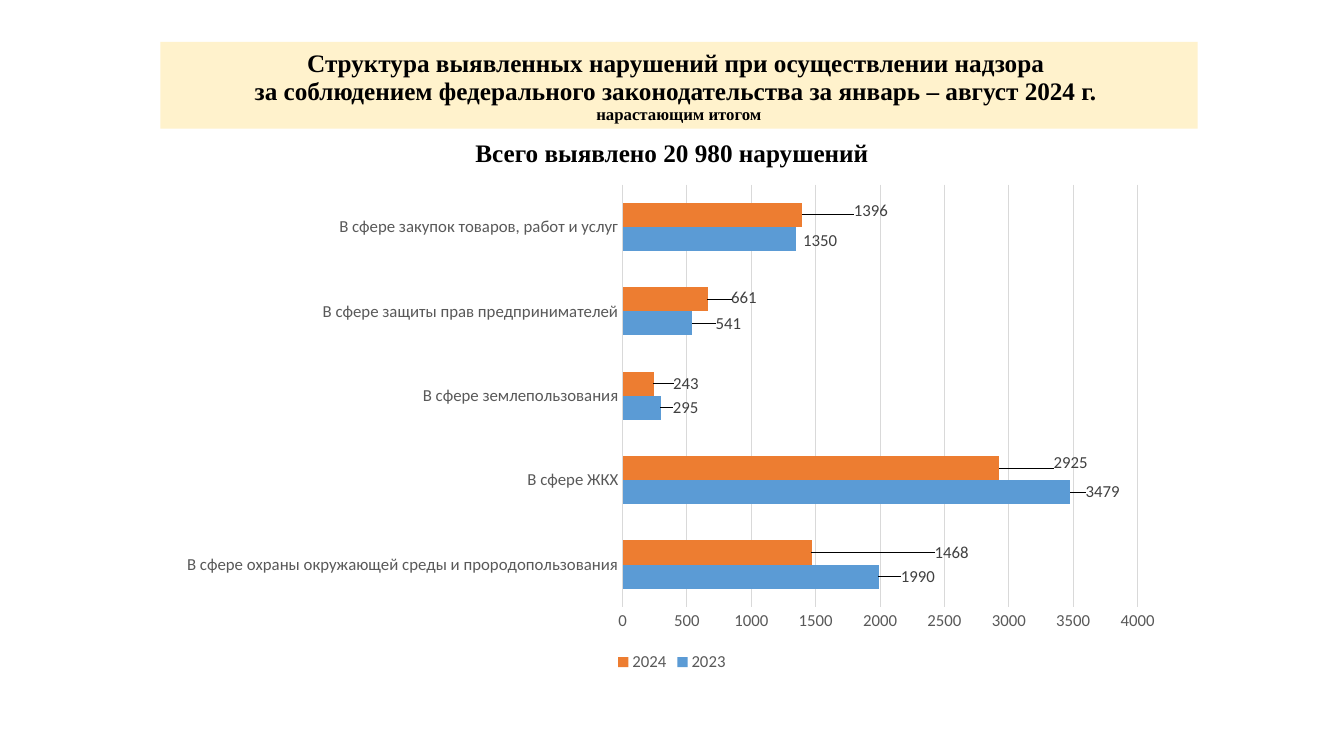
from copy import deepcopy
from lxml.etree import SubElement as sub
from pptx import Presentation
from pptx.chart.data import CategoryChartData as Data
from pptx.dml.color import RGBColor as RGB
from pptx.enum.chart import XL_CHART_TYPE as Kind, XL_LABEL_POSITION as Spot
from pptx.enum.chart import XL_LEGEND_POSITION as Side, XL_TICK_MARK as Tick
from pptx.enum.text import MSO_ANCHOR as Anchor, MSO_AUTO_SIZE as Fit, PP_ALIGN as Align
from pptx.oxml import parse_xml
from pptx.oxml.ns import qn
from pptx.util import Pt

HEX = {"band": "FFF2CC", "black": "000000", "text": "595959", "label": "404040",
       "grid": "D9D9D9", "2023": "5B9BD5", "2024": "ED7D31"}
HEAD = ("Структура выявленных нарушений при осуществлении надзора \v"
        "за соблюдением федерального законодательства за январь – август 2024 г. \v"
        "нарастающим итогом")
TOTAL = "Всего выявлено 20 980 нарушений"
AREAS = ["В сфере охраны окружающей среды и прородопользования", "В сфере ЖКХ",
         "В сфере землепользования", "В сфере защиты прав предпринимателей",
         "В сфере закупок товаров, работ и услуг"]
COUNTS = {"2023": [1990, 3479, 295, 541, 1350], "2024": [1468, 2925, 243, 661, 1396]}
# Label shifts in points from the end of each bar
SHIFTS = {"2023": [(13, 0), (8, 0), (6, 0), (14, 0), (2, 1)],
          "2024": [(85, 0), (36, -4), (11, 0), (14, -1), (34, -3)]}


def color(name):
    return RGB.from_string(HEX[name])


def style(font, size, tone, face="Calibri", bold=False):
    font.name, font.size, font.bold = face, Pt(size), bold
    font.color.rgb = color(tone)


def place(shape, box):
    shape.left, shape.top, shape.width, shape.height = [Pt(v) for v in box]


def set_text(shape, text, sizes, space):
    frame = shape.text_frame
    frame.word_wrap, frame.auto_size = True, Fit.NONE
    para = frame.paragraphs[0]
    para.text = text
    para.alignment, para.line_spacing = Align.CENTER, space
    for run, size in zip(para.runs, sizes):
        style(run.font, size, "black", "Times New Roman", True)
    # Line breaks take the format of the first run
    for gap in para._p.findall(qn("a:br")):
        gap.append(deepcopy(para.runs[0].font._rPr))


def add_head(slide, box):
    title = slide.shapes.title
    place(title, box)
    title.fill.solid()
    title.fill.fore_color.rgb = color("band")
    set_text(title, HEAD, [18, 18, 12], 0.9)
    title.text_frame.vertical_anchor = Anchor.BOTTOM


def add_total(slide, box):
    note = slide.shapes.add_textbox(*[Pt(v) for v in box])
    set_text(note, TOTAL, [18], 0.8)


def set_layout(layout, **values):
    for old in list(layout):
        layout.remove(old)
    manual = sub(layout, qn("c:manualLayout"))
    for key, val in values.items():
        sub(manual, qn("c:" + key)).set("val", str(val))


def add_labels(series, box):
    labels = series.data_labels
    labels.show_value, labels.position = True, Spot.OUTSIDE_END
    style(labels.font, 12, "label")
    for i, (dx, dy) in enumerate(SHIFTS[series.name]):
        label = series.points[i].data_label
        style(label.font, 12, "label")
        label.position = Spot.OUTSIDE_END
        node = labels._element.findall(qn("c:dLbl"))[i]
        layout = node.makeelement(qn("c:layout"))
        node.insert(1, layout)
        set_layout(layout, x=round(dx / box[2], 4), y=round(dy / box[3], 4))


def add_bars(slide, box):
    data = Data()
    data.categories = AREAS
    for year, vals in COUNTS.items():
        data.add_series(year, vals)
    chart = slide.shapes.add_chart(Kind.BAR_CLUSTERED, *[Pt(v) for v in box], data).chart
    style(chart.font, 10, "black")
    chart.has_title = False

    # Axes
    for axis in (chart.category_axis, chart.value_axis):
        axis.major_tick_mark = axis.minor_tick_mark = Tick.NONE
        axis.format.line.fill.background()
        style(axis.tick_labels.font, 12, "text")
    scale = chart.value_axis
    scale.minimum_scale, scale.maximum_scale, scale.major_unit = 0, 4000, 500
    grid = scale.major_gridlines.format.line
    grid.width = Pt(0.75)
    grid.color.rgb = color("grid")

    # Legend
    chart.has_legend = True
    chart.legend.position, chart.legend.include_in_layout = Side.BOTTOM, False
    style(chart.legend.font, 12, "text")

    # Bars and their values
    plot = chart.plots[0]
    plot.gap_width, plot.vary_by_categories = 150, False
    for series in plot.series:
        series.format.fill.solid()
        series.format.fill.fore_color.rgb = color(series.name)
        add_labels(series, box)

    # Plot area
    area = chart._chartSpace.chart.plotArea
    layout = area.find(qn("c:layout"))
    if layout is None:
        layout = area.makeelement(qn("c:layout"))
        area.insert(0, layout)
    set_layout(layout, layoutTarget="inner", xMode="edge", yMode="edge",
               x=0.451, y=0.022, w=0.511, h=0.84)


def main():
    deck = Presentation()
    deck.slide_width, deck.slide_height = Pt(960), Pt(540)
    slide = deck.slides.add_slide(deck.slide_layouts[5])
    add_head(slide, (114.5, 30, 741, 62))
    add_total(slide, (120, 98.5, 720, 26))
    add_bars(slide, (120, 124, 720, 359))
    deck.save("out.pptx")


if __name__ == "__main__":
    main()
